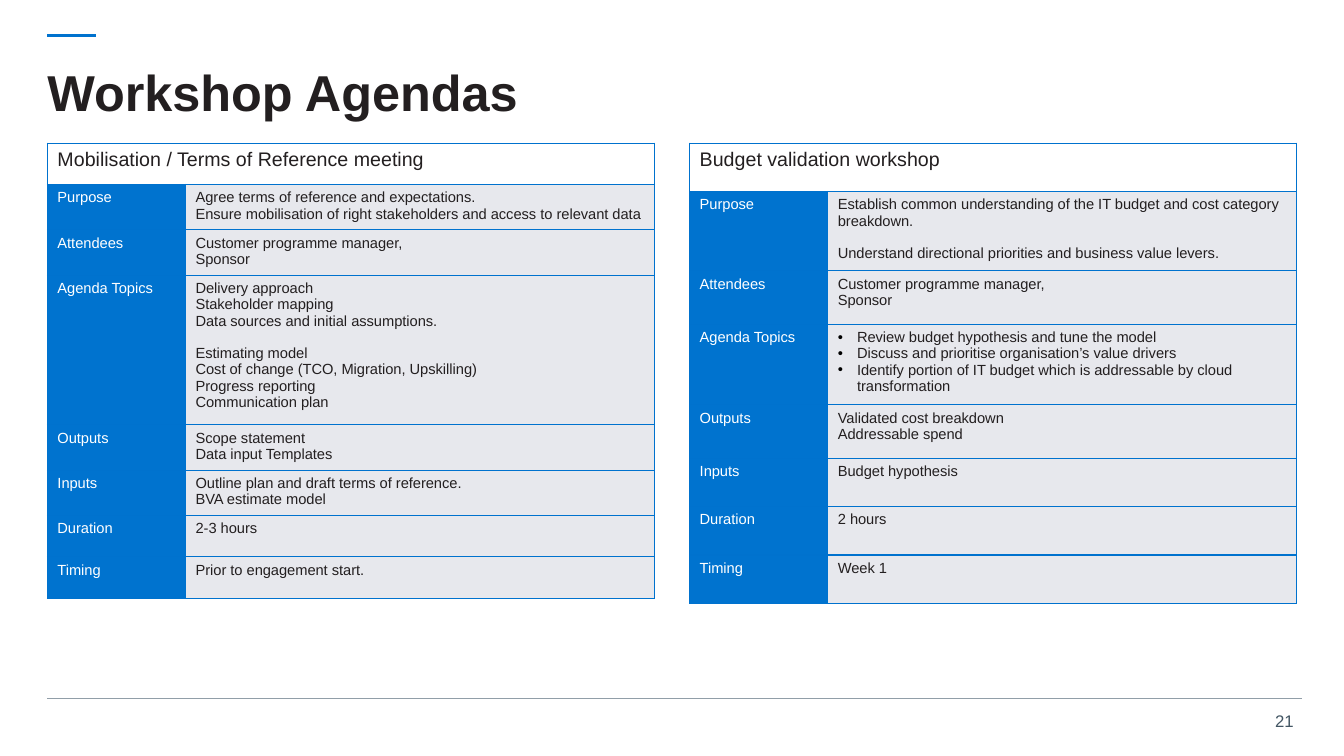
import pptx
import pptx.dml.color
import pptx.enum.shapes
import pptx.enum.text
import pptx.oxml
import pptx.oxml.ns
import pptx.util
from lxml import etree
from pptx.util import Inches

BLUE, CELL_BLUE, GREY = "0072CE", "0073CF", "E7E8ED"
INK, WHITE, RULE, SLATE = "231F20", "FFFFFF", "919EA8", "425563"

# Each row: label, height, groups of lines; "• " starts a bulleted line
MOBILISATION = [
    ("Purpose", 0.42, [["Agree terms of reference and expectations.",
                        "Ensure mobilisation of right stakeholders and access to relevant data"]]),
    ("Attendees", 0.45, [["Customer programme manager,", "Sponsor"]]),
    ("Agenda Topics", 1.39, [
        ["Delivery approach", "Stakeholder mapping", "Data sources and initial assumptions."],
        ["Estimating model", "Cost of change (TCO, Migration, Upskilling)",
         "Progress reporting", "Communication plan"]]),
    ("Outputs", 0.42, [["Scope statement", "Data input Templates"]]),
    ("Inputs", 0.42, [["Outline plan and draft terms of reference.", "BVA estimate model"]]),
    ("Duration", 0.41, [["2-3 hours"]]),
    ("Timing", 0.41, [["Prior to engagement start."]]),
]
BUDGET = [
    ("Purpose", 0.75, [
        ["Establish common understanding of the IT budget and cost category breakdown."],
        ["Understand directional priorities and business value levers."]]),
    ("Attendees", 0.53, [["Customer programme manager,", "Sponsor"]]),
    ("Agenda Topics", 0.75, [[
        "• Review budget hypothesis and tune the model",
        "• Discuss and prioritise organisation’s value drivers",
        "• Identify portion of IT budget which is addressable by cloud transformation"]]),
    ("Outputs", 0.53, [["Validated cost breakdown", "Addressable spend"]]),
    ("Inputs", 0.48, [["Budget hypothesis"]]),
    ("Duration", 0.48, [["2 hours"]]),
    ("Timing", 0.48, [["Week 1"]]),
]


def colour(value):
    return pptx.dml.color.RGBColor.from_string(value)


def apply(target, values):
    for name, value in values.items():
        setattr(target, name, value)


class AgendaSlide:
    font = "Arial"
    body_size = 10.5
    line_gap = 11.6
    columns = (1.37, 4.65)

    def __init__(self, presentation):
        self.slide = presentation.slides.add_slide(presentation.slide_layouts[5])

    def add_text(self, paragraph, text, size, ink, bold=False):
        run = paragraph.add_run()
        run.text = text
        apply(run.font, {"name": self.font, "size": pptx.util.Pt(size), "bold": bold})
        run.font.color.rgb = colour(ink)

    def title(self, text, left, top, width, height):
        shape = self.slide.shapes.title
        apply(shape, {"left": Inches(left), "top": Inches(top),
                      "width": Inches(width), "height": Inches(height)})
        apply(shape.text_frame, {
            "margin_left": 0, "margin_right": 0, "margin_top": 0, "margin_bottom": 0,
            "word_wrap": True, "auto_size": pptx.enum.text.MSO_AUTO_SIZE.NONE,
            "vertical_anchor": pptx.enum.text.MSO_ANCHOR.MIDDLE})
        paragraph = shape.text_frame.paragraphs[0]
        apply(paragraph, {"alignment": pptx.enum.text.PP_ALIGN.LEFT, "line_spacing": 0.9})
        self.add_text(paragraph, text, 36, INK, bold=True)

    def rule(self, left, right, top, ink, weight):
        line = self.slide.shapes.add_connector(
            pptx.enum.shapes.MSO_CONNECTOR.STRAIGHT,
            Inches(left), Inches(top), Inches(right), Inches(top))
        line.line.color.rgb = colour(ink)
        line.line.width = pptx.util.Pt(weight)
        etree.SubElement(line._element.spPr, pptx.oxml.ns.qn("a:effectLst"))

    def page_number(self, text, left, top, width, height):
        box = self.slide.shapes.add_textbox(
            Inches(left), Inches(top), Inches(width), Inches(height))
        box.text_frame.word_wrap = True
        paragraph = box.text_frame.paragraphs[0]
        paragraph.alignment = pptx.enum.text.PP_ALIGN.RIGHT
        self.add_text(paragraph, text, 12, SLATE)

    def style_cell(self, cell, fill):
        cell.fill.solid()
        cell.fill.fore_color.rgb = colour(fill)
        properties = cell._tc.get_or_add_tcPr()
        for position, side in enumerate(("lnL", "lnR", "lnT", "lnB")):
            border = etree.Element(pptx.oxml.ns.qn(f"a:{side}"), w="12700")
            solid = etree.SubElement(border, pptx.oxml.ns.qn("a:solidFill"))
            etree.SubElement(solid, pptx.oxml.ns.qn("a:srgbClr"), val=BLUE)
            properties.insert(position, border)

    def add_bullet(self, paragraph):
        properties = paragraph._p.get_or_add_pPr()
        properties.set("marL", str(Inches(0.19)))
        properties.set("indent", str(-Inches(0.19)))
        bullet_colour = etree.SubElement(properties, pptx.oxml.ns.qn("a:buClr"))
        etree.SubElement(bullet_colour, pptx.oxml.ns.qn("a:srgbClr"), val="000000")
        etree.SubElement(properties, pptx.oxml.ns.qn("a:buFont"), typeface=self.font)
        etree.SubElement(properties, pptx.oxml.ns.qn("a:buChar"), char="•")

    def fill_details(self, cell, groups):
        frame = cell.text_frame
        for group_index, group in enumerate(groups):
            for line_index, text in enumerate(group):
                first = group_index == line_index == 0
                paragraph = frame.paragraphs[0] if first else frame.add_paragraph()
                if group_index and line_index == 0:
                    paragraph.space_before = pptx.util.Pt(self.line_gap)
                if text.startswith("• "):
                    self.add_bullet(paragraph)
                self.add_text(paragraph, text.removeprefix("• "), self.body_size, INK)

    def agenda(self, heading, heading_height, rows, left, top):
        heights = [heading_height] + [height for _, height, _ in rows]
        table = self.slide.shapes.add_table(
            len(heights), 2, Inches(left), Inches(top),
            Inches(sum(self.columns)), Inches(sum(heights))).table
        for column, width in zip(table.columns, self.columns):
            column.width = Inches(width)
        for row, height in zip(table.rows, heights):
            row.height = Inches(height)

        # Heading across both columns
        table.cell(0, 0).merge(table.cell(0, 1))
        for column in range(2):
            self.style_cell(table.cell(0, column), WHITE)
        self.add_text(table.cell(0, 0).text_frame.paragraphs[0], heading, 14, INK)

        # Label and details
        for index, (label, _, groups) in enumerate(rows, start=1):
            label_cell, details_cell = table.cell(index, 0), table.cell(index, 1)
            self.style_cell(label_cell, CELL_BLUE)
            self.style_cell(details_cell, GREY)
            self.add_text(label_cell.text_frame.paragraphs[0], label, self.body_size, WHITE)
            self.fill_details(details_cell, groups)


def main():
    presentation = pptx.Presentation()
    apply(presentation, {"slide_width": Inches(13.33), "slide_height": Inches(7.5)})
    page = AgendaSlide(presentation)

    # Frame of the page
    page.page_number("21", 12.52, 7, 0.41, 0.3)
    page.rule(0.47, 0.95, 0.35, BLUE, 2)
    page.rule(0.47, 12.91, 6.93, RULE, 0.75)
    page.title("Workshop Agendas", 0.47, 0.47, 12.47, 0.95)

    # The two agendas
    page.agenda("Mobilisation / Terms of Reference meeting", 0.41, MOBILISATION, 0.47, 1.42)
    page.agenda("Budget validation workshop", 0.48, BUDGET, 6.84, 1.42)

    presentation.save("out.pptx")


if __name__ == "__main__":
    main()
